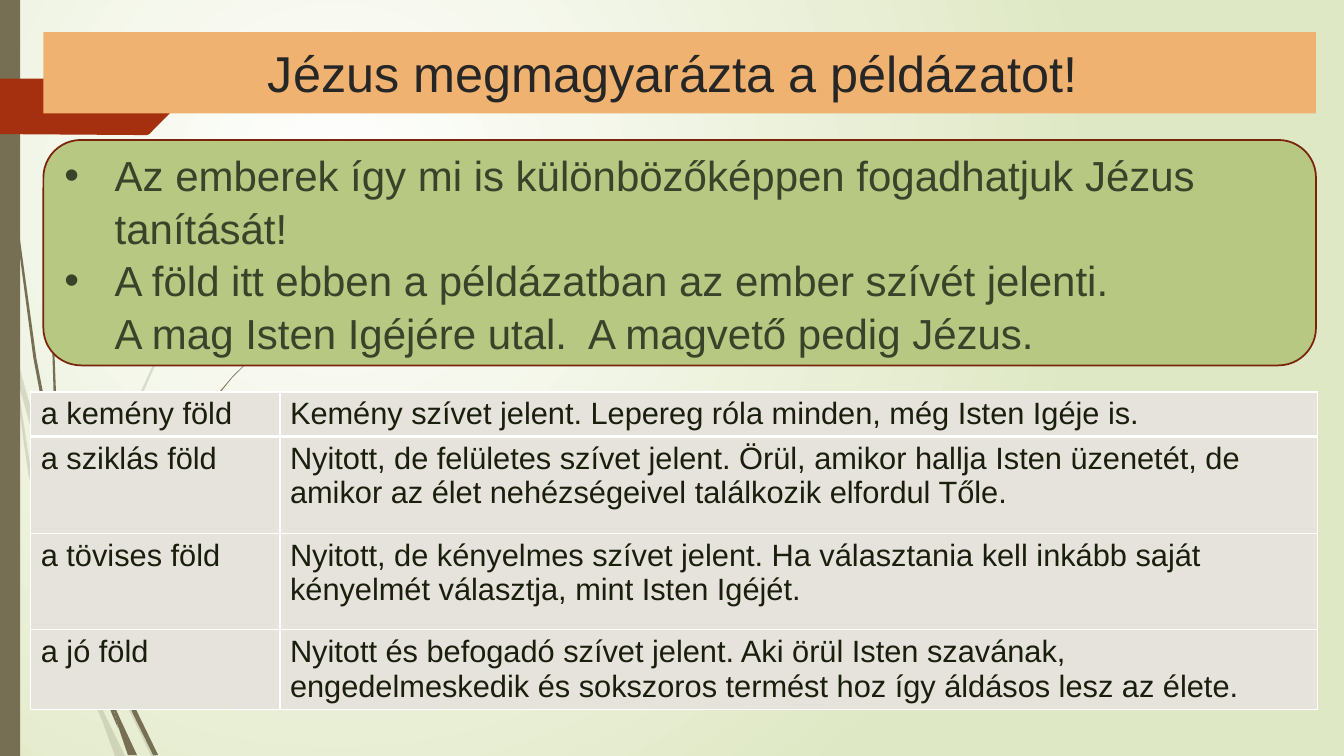
from dataclasses import dataclass

from lxml.etree import SubElement
from pptx import Presentation
from pptx.dml.color import RGBColor
from pptx.enum.shapes import MSO_SHAPE
from pptx.enum.text import MSO_ANCHOR, PP_ALIGN
from pptx.oxml.ns import qn
from pptx.util import Pt


@dataclass(frozen=True)
class Theme:
    font: str = "Arial"
    title_size: int = 36
    body_size: int = 30
    table_size: int = 22
    title_text: str = "262626"
    body_text: str = "39432A"
    table_text: str = "1A1F0D"
    white: str = "FFFFFF"
    background_edge: str = "DFE8C4"
    stem: str = "766F54"
    ribbon: str = "A53010"
    title_fill: str = "F0B270"
    panel_fill: str = "B6C882"
    panel_line: str = "7A240C"
    cell_fill: str = "E5E3DB"


THEME = Theme()

TITLE = "Jézus megmagyarázta a példázatot! "
# Each entry: text, bulleted or not
MESSAGES = [
    ("Az emberek így mi is különbözőképpen fogadhatjuk Jézus tanítását!", True),
    ("A föld itt ebben a példázatban az ember szívét jelenti.", True),
    ("\tA mag Isten Igéjére utal.  A magvető pedig Jézus.", False),
]
SOILS = [
    ("a kemény föld", "Kemény szívet jelent. Lepereg róla minden, még Isten Igéje is."),
    ("a sziklás föld", "Nyitott, de felületes szívet jelent. Örül, amikor hallja Isten üzenetét, "
     "de amikor az élet nehézségeivel találkozik elfordul Tőle."),
    ("a tövises föld", "Nyitott, de kényelmes szívet jelent. Ha választania kell inkább saját "
     "kényelmét választja, mint Isten Igéjét."),
    ("a jó föld", "Nyitott és befogadó szívet jelent. Aki örül Isten szavának, "
     "engedelmeskedik és sokszoros termést hoz így áldásos lesz az élete."),
]
COLUMN_WIDTHS = (178, 741)
ROW_HEIGHTS = (31, 69, 69, 57)

# Outlines of the grass blades, in points
PALE_BLADES = [
    [(41.8, 375.8), (60.5, 431.3), (61.2, 421.9), (44.6, 374.4), (10.1, 248.4), (12.2, 270.7)],
    [(66.2, 437), (63.4, 429.1), (63.4, 439.2), (88.6, 499.7), (108, 540), (111.6, 540),
     (91.4, 498.2)],
    [(67, 491.8), (72.7, 514.1), (82.1, 540), (89.3, 540), (75.6, 511.9), (69.1, 498.2)],
    [(67, 491.8), (50.4, 445.7), (22.3, 337.7), (12.2, 270.7), (7.9, 252), (20.2, 338.4),
     (46.8, 447.1), (66.2, 499), (72.7, 514.1), (71.3, 509)],
    [(63.4, 420.5), (79.2, 332.6), (115.2, 251.3), (164.9, 176.4), (193, 142.6), (224.6, 110.5),
     (193, 141.8), (164.2, 175.7), (113.8, 250.6), (77, 331.9), (61.2, 421.2), (63.4, 429.1)],
]
DARK_BLADES = [
    [(5, 79.2), (12.2, 167.8), (23.8, 255.6), (40.3, 343.4), (41, 346.3), (39.6, 326.2),
     (25.9, 255.6), (13.7, 167), (5.8, 78.5), (2.9, 0), (2.2, 0), (2.9, 34.6)],
    [(81.4, 467.3), (79.2, 461.5), (79.9, 472.3), (95, 509.8), (109.4, 539.3), (113, 539.3),
     (97.9, 508.3)],
    [(79.2, 497.5), (70.6, 473), (51.8, 400.3), (46.1, 363.6), (41, 343.4), (49, 401),
     (67, 474.5), (79.9, 509.8), (84.2, 519.8), (83.5, 516.2)],
    [(43.2, 339.8), (41.8, 326.2), (38.9, 251.3), (41.8, 176.4), (50.4, 101.5), (40.3, 176.4),
     (37.4, 251.3), (39.6, 323.3)],
    [(79.2, 497.5), (83.5, 516.2), (91.4, 539.3), (97.9, 539.3), (87.8, 517.7), (83.5, 508.3)],
    [(79.9, 455.8), (90, 397.4), (113.8, 342.7), (147.6, 292.3), (166.3, 269.3), (187.9, 247.7),
     (166.3, 268.6), (146.9, 291.6), (112.3, 341.3), (87.8, 396.7), (76.3, 454.3), (79.2, 461.5)],
]
RIBBON = [(0, 56.2), (105, 56.2), (106.6, 56.9), (125.3, 75.6), (125.3, 77), (106.6, 95.8),
          (105, 96.5), (0, 95.8)]


def color(value):
    return RGBColor.from_string(value)


def write(paragraph, text, *, size, text_color, align=PP_ALIGN.LEFT, bullet=False,
          line_spacing=None):
    paragraph.text = text
    paragraph.alignment = align
    paragraph.line_spacing = line_spacing
    if bullet:
        properties = paragraph._p.get_or_add_pPr()
        properties.set("marL", str(Pt(36)))
        properties.set("indent", str(-Pt(36)))
        SubElement(properties, qn("a:buFont")).set("typeface", THEME.font)
        SubElement(properties, qn("a:buChar")).set("char", "•")
    for run in paragraph.runs:
        run.font.name = THEME.font
        run.font.size = Pt(size)
        run.font.color.rgb = color(text_color)


def paint(shape, fill, line=None, alpha=None):
    shape.shadow.inherit = False
    shape.fill.solid()
    shape.fill.fore_color.rgb = color(fill)
    if alpha:
        tint = shape.element.spPr.find(qn("a:solidFill"))[0]
        SubElement(tint, qn("a:alpha")).set("val", str(alpha * 1000))
    if line:
        shape.line.color.rgb = color(line)
        shape.line.width = Pt(1.25)
    else:
        shape.line.fill.background()


def add_outline(slide, points, fill, alpha=None):
    start, *rest = [(Pt(x), Pt(y)) for x, y in points]
    builder = slide.shapes.build_freeform(*start, scale=1.0)
    builder.add_line_segments(rest, close=True)
    paint(builder.convert_to_shape(), fill, alpha=alpha)


def set_background(slide):
    fill = slide.background.fill
    fill.gradient()
    for stop, value in zip(fill.gradient_stops, (THEME.white, THEME.background_edge)):
        stop.color.rgb = color(value)
    # Radial gradient with its centre left of and above the middle
    linear = next(slide.element.iter(qn("a:lin")))
    gradient = linear.getparent()
    gradient.remove(linear)
    radial = SubElement(gradient, qn("a:path"), path="circle")
    SubElement(radial, qn("a:fillToRect"), l="50000", t="50000", r="100000", b="100000")


def add_decoration(slide):
    for blade in PALE_BLADES:
        add_outline(slide, blade, THEME.stem, alpha=20)
    for blade in DARK_BLADES:
        add_outline(slide, blade, THEME.stem)
    side_bar = slide.shapes.add_shape(MSO_SHAPE.RECTANGLE, 0, 0, Pt(14.4), Pt(540))
    paint(side_bar, THEME.stem)
    add_outline(slide, RIBBON, THEME.ribbon)


def format_title(slide):
    title = slide.shapes.title
    title.left, title.top, title.width, title.height = Pt(31), Pt(23), Pt(909), Pt(58)
    title.fill.solid()
    title.fill.fore_color.rgb = color(THEME.title_fill)
    title.text_frame.vertical_anchor = MSO_ANCHOR.MIDDLE
    write(title.text_frame.paragraphs[0], TITLE, size=THEME.title_size,
          text_color=THEME.title_text, align=PP_ALIGN.CENTER)
    # Bring the title in front of the ribbon
    title.element.getparent().append(title.element)


def add_message_panel(slide):
    panel = slide.shapes.add_shape(MSO_SHAPE.ROUNDED_RECTANGLE, Pt(31), Pt(100), Pt(909), Pt(161))
    paint(panel, THEME.panel_fill, line=THEME.panel_line)
    frame = panel.text_frame
    frame.word_wrap = True
    frame.vertical_anchor = MSO_ANCHOR.MIDDLE
    for index, (text, bullet) in enumerate(MESSAGES):
        paragraph = frame.add_paragraph() if index else frame.paragraphs[0]
        write(paragraph, text, size=THEME.body_size, text_color=THEME.body_text,
              bullet=bullet, line_spacing=1.04)


def set_borders(cell, widths):
    properties = cell._tc.get_or_add_tcPr()
    for side, width in widths.items():
        border = SubElement(properties, qn(f"a:ln{side}"), w=str(Pt(width)))
        solid = SubElement(border, qn("a:solidFill"))
        SubElement(solid, qn("a:srgbClr"), val=THEME.white)


def add_soil_table(slide):
    table = slide.shapes.add_table(len(SOILS), len(COLUMN_WIDTHS), Pt(22), Pt(280),
                                   Pt(sum(COLUMN_WIDTHS)), Pt(sum(ROW_HEIGHTS))).table
    for column, width in zip(table.columns, COLUMN_WIDTHS):
        column.width = Pt(width)
    for row_index, (row, texts) in enumerate(zip(table.rows, SOILS)):
        row.height = Pt(ROW_HEIGHTS[row_index])
        for cell, text in zip(row.cells, texts):
            # A thick rule separates the first row from the others
            set_borders(cell, {"L": 1, "R": 1, "T": 3 if row_index == 1 else 1,
                               "B": 3 if row_index == 0 else 1})
            cell.fill.solid()
            cell.fill.fore_color.rgb = color(THEME.cell_fill)
            write(cell.text_frame.paragraphs[0], text, size=THEME.table_size,
                  text_color=THEME.table_text)


def main():
    presentation = Presentation()
    presentation.slide_width, presentation.slide_height = Pt(960), Pt(540)
    slide = presentation.slides.add_slide(presentation.slide_layouts[5])
    set_background(slide)
    add_decoration(slide)
    format_title(slide)
    add_message_panel(slide)
    add_soil_table(slide)
    presentation.save("out.pptx")


if __name__ == "__main__":
    main()
